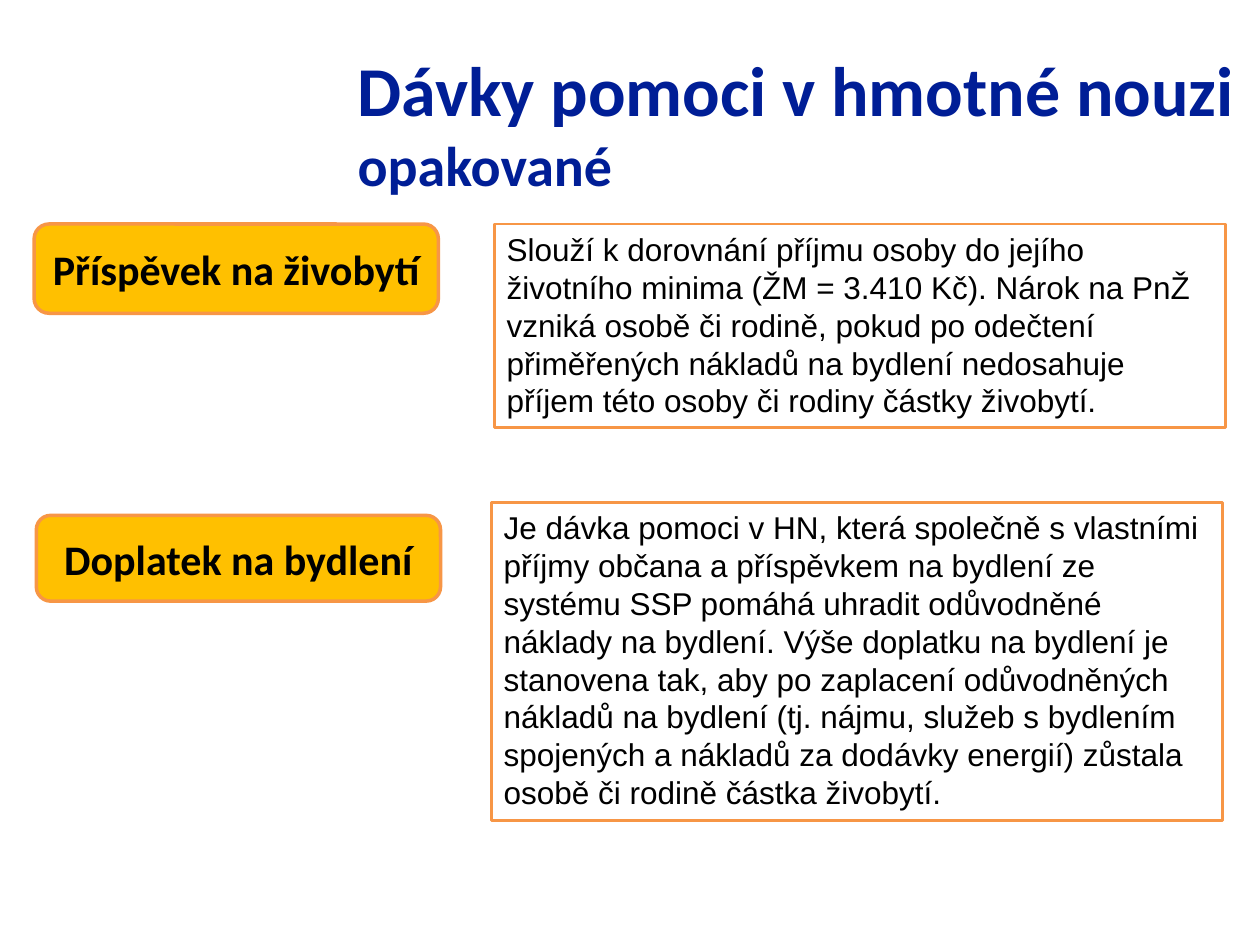
from pptx import Presentation
from pptx.dml.color import RGBColor
from pptx.enum.shapes import MSO_SHAPE
from pptx.enum.text import MSO_ANCHOR, MSO_AUTO_SIZE, PP_ALIGN
from pptx.util import Pt

RECTANGLE = MSO_SHAPE.RECTANGLE
ROUNDED_RECTANGLE = MSO_SHAPE.ROUNDED_RECTANGLE
TOP, MIDDLE = MSO_ANCHOR.TOP, MSO_ANCHOR.MIDDLE
LEFT, CENTER = PP_ALIGN.LEFT, PP_ALIGN.CENTER
FIT_SHAPE = MSO_AUTO_SIZE.SHAPE_TO_FIT_TEXT

BLUE = RGBColor(0x00, 0x1E, 0x96)
GOLD = RGBColor(0xFF, 0xC0, 0x00)
ORANGE = RGBColor(0xF7, 0x96, 0x46)
BLACK = RGBColor(0x00, 0x00, 0x00)

TITLE_FONT = {"name": "Calibri", "bold": True}
LABEL_FONT = {"name": "Calibri", "bold": True, "size": Pt(24)}
BODY_FONT = {"name": "Arial", "bold": False, "size": Pt(18)}

TITLE_LINES = [("Dávky pomoci v hmotné nouzi", 40), ("opakované", 32)]
BENEFITS = [
    (
        "Příspěvek na živobytí",
        (19.5, 128, 231, 51),
        "Slouží k dorovnání příjmu osoby do jejího životního minima "
        "(ŽM = 3.410 Kč). Nárok na PnŽ vzniká osobě či rodině, pokud po "
        "odečtení přiměřených nákladů na bydlení nedosahuje příjem této "
        "osoby či rodiny částky živobytí.",
        (282.5, 128, 418, 116.5),
    ),
    (
        "Doplatek na bydlení",
        (20.75, 294.5, 231, 49),
        "Je dávka pomoci v HN, která společně s vlastními příjmy občana a "
        "příspěvkem na bydlení ze systému SSP pomáhá uhradit odůvodněné "
        "náklady na bydlení. Výše doplatku na bydlení je stanovena tak, aby "
        "po zaplacení odůvodněných nákladů na bydlení (tj. nájmu, služeb s "
        "bydlením spojených a nákladů za dodávky energií) zůstala osobě či "
        "rodině částka živobytí.",
        (280.75, 287, 418, 181.75),
    ),
]


def set_attributes(target, values):
    for name, value in values.items():
        setattr(target, name, value)


def write_run(paragraph, text, font_format, color):
    run = paragraph.add_run()
    run.text = text
    set_attributes(run.font, font_format)
    run.font.color.rgb = color


def add_title(slide):
    box = slide.shapes.add_textbox(Pt(197.25), Pt(23), Pt(520.5), Pt(94.5))
    frame = box.text_frame
    set_attributes(frame, {"word_wrap": False, "auto_size": FIT_SHAPE})
    for index, (text, size) in enumerate(TITLE_LINES):
        paragraph = frame.add_paragraph() if index else frame.paragraphs[0]
        write_run(paragraph, text, {**TITLE_FONT, "size": Pt(size)}, BLUE)


def add_box(slide, kind, bounds, line_width, text, font_format, alignment, frame_format):
    shape = slide.shapes.add_shape(kind, *map(Pt, bounds))
    shape.shadow.inherit = False
    shape.line.color.rgb = ORANGE
    shape.line.width = Pt(line_width)
    set_attributes(shape.text_frame, {"word_wrap": True, **frame_format})
    paragraph = shape.text_frame.paragraphs[0]
    paragraph.alignment = alignment
    write_run(paragraph, text, font_format, BLACK)
    return shape


def add_label(slide, text, bounds):
    shape = add_box(slide, ROUNDED_RECTANGLE, bounds, 2, text, LABEL_FONT,
                    CENTER, {"vertical_anchor": MIDDLE})
    shape.fill.solid()
    shape.fill.fore_color.rgb = GOLD


def add_description(slide, text, bounds):
    shape = add_box(slide, RECTANGLE, bounds, 1.5, text, BODY_FONT,
                    LEFT, {"vertical_anchor": TOP, "auto_size": FIT_SHAPE})
    shape.fill.background()


def main():
    presentation = Presentation()
    set_attributes(presentation, {"slide_width": Pt(720), "slide_height": Pt(540)})
    slide = presentation.slides.add_slide(presentation.slide_layouts[6])
    add_title(slide)
    for label, label_bounds, description, description_bounds in BENEFITS:
        add_label(slide, label, label_bounds)
        add_description(slide, description, description_bounds)
    presentation.save("out.pptx")


if __name__ == "__main__":
    main()
